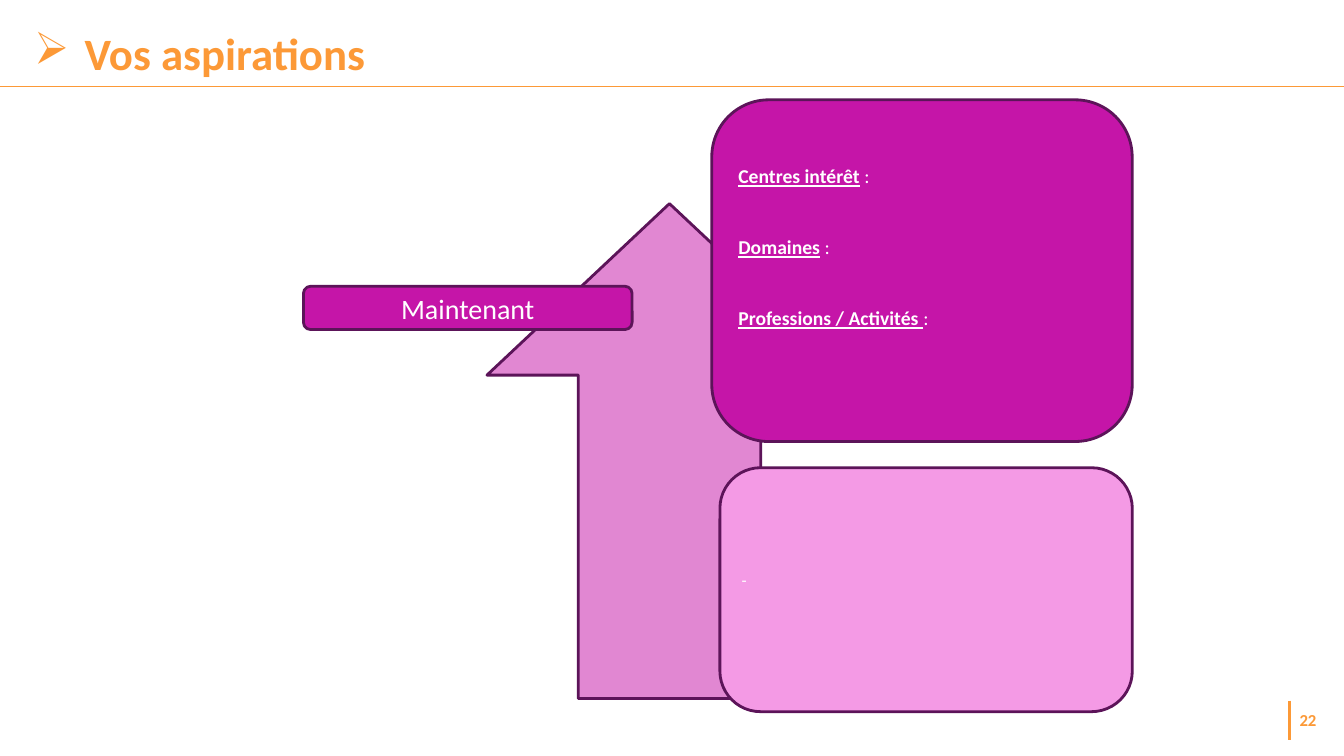
from typing import NamedTuple

from lxml.etree import SubElement
from pptx import Presentation
from pptx.dml.color import RGBColor
from pptx.enum.shapes import MSO_CONNECTOR, MSO_SHAPE
from pptx.enum.text import MSO_ANCHOR, PP_ALIGN
from pptx.oxml.ns import qn
from pptx.shapes.autoshape import Shape
from pptx.slide import Slide
from pptx.util import Inches, Pt

COLOURS = {
    "orange": "FC9937",
    "magenta": "C515A8",
    "pink": "F49AE5",
    "plum": "5C1459",
    "white": "FFFFFF",
}
FONT = "Calibri"


class Rule(NamedTuple):
    start: tuple[float, float]
    end: tuple[float, float]
    width: float


class Line(NamedTuple):
    """A paragraph: an optional bold underlined heading, then plain text."""
    heading: str
    plain: str


class Panel(NamedTuple):
    box: tuple[float, float, float, float]
    fill: str
    size: float
    lines: list[Line]
    alignment: PP_ALIGN = PP_ALIGN.LEFT
    gap: float = 0
    bottom_inset: float = 0.05


class Label(NamedTuple):
    box: tuple[float, float, float, float]
    text: str
    size: float
    anchor: MSO_ANCHOR
    bullet: str = ""


RULES = [
    Rule((0, 0.86), (13.33, 0.86), 1),
    Rule((12.79, 6.95), (12.79, 7.34), 1.5),
]
PANELS = [
    Panel((3.01, 2.84, 3.26, 0.43), "magenta", 20, [Line("", "Maintenant")], PP_ALIGN.CENTER),
    Panel(
        (7.06, 0.99, 4.17, 3.39), "magenta", 14,
        [
            Line("Centres intérêt", " :"),
            Line("Domaines", " :"),
            Line("Professions / Activités ", ":"),
        ],
        gap=34, bottom_inset=0.52,
    ),
    Panel((7.14, 4.64, 4.09, 2.42), "pink", 12, [Line("", "-")], bottom_inset=0.25),
]
LABELS = [
    Label((0.24, 0.02, 12.82, 0.83), "Vos aspirations", 32, MSO_ANCHOR.BOTTOM, "➢"),
    Label((12.79, 6.95, 0.49, 0.39), "22", 12, MSO_ANCHOR.MIDDLE),
]


def colour(name: str) -> RGBColor:
    return RGBColor.from_string(COLOURS[name])


def add_rule(slide: Slide, rule: Rule) -> None:
    points = [Inches(value) for value in (*rule.start, *rule.end)]
    connector = slide.shapes.add_connector(MSO_CONNECTOR.STRAIGHT, *points)
    connector.line.color.rgb = colour("orange")
    connector.line.width = Pt(rule.width)
    SubElement(connector.element.spPr, qn("a:effectLst"))


def add_outlined_shape(
    slide: Slide, kind: MSO_SHAPE, box: tuple[float, float, float, float], fill: str
) -> Shape:
    shape = slide.shapes.add_shape(kind, *map(Inches, box))
    shape.shadow.inherit = False
    shape.fill.solid()
    shape.fill.fore_color.rgb = colour(fill)
    shape.line.color.rgb = colour("plum")
    shape.line.width = Pt(2)
    return shape


def add_arrow(slide: Slide) -> None:
    arrow = add_outlined_shape(slide, MSO_SHAPE.UP_ARROW, (4.83, 2.02, 3.62, 4.91), "magenta")
    arrow.adjustments[0] = 0.5
    arrow.adjustments[1] = 0.47
    fill_colour = arrow.element.spPr.find(qn("a:solidFill")).find(qn("a:srgbClr"))
    SubElement(fill_colour, qn("a:alpha"), val="51000")


def add_panel(slide: Slide, panel: Panel) -> None:
    shape = add_outlined_shape(slide, MSO_SHAPE.ROUNDED_RECTANGLE, panel.box, panel.fill)
    frame = shape.text_frame
    frame.vertical_anchor = MSO_ANCHOR.MIDDLE
    frame.margin_bottom = Inches(panel.bottom_inset)
    for index, line in enumerate(panel.lines):
        paragraph = frame.add_paragraph() if index else frame.paragraphs[0]
        paragraph.alignment = panel.alignment
        if index:
            paragraph.space_before = Pt(panel.gap)
        for text, is_heading in ((line.heading, True), (line.plain, False)):
            if not text:
                continue
            run = paragraph.add_run()
            run.text = text
            run.font.name = FONT
            run.font.size = Pt(panel.size)
            run.font.color.rgb = colour("white")
            run.font.bold = run.font.underline = is_heading


def add_label(slide: Slide, label: Label) -> None:
    frame = slide.shapes.add_textbox(*map(Inches, label.box)).text_frame
    frame.word_wrap = True
    frame.vertical_anchor = label.anchor
    frame.text = label.text
    paragraph = frame.paragraphs[0]
    if label.bullet:
        properties = paragraph._p.get_or_add_pPr()
        properties.set("marL", str(Inches(0.5)))
        properties.set("indent", str(-Inches(0.5)))
        bullet_colour = SubElement(properties, qn("a:buClr"))
        SubElement(bullet_colour, qn("a:srgbClr"), val=COLOURS["orange"])
        SubElement(properties, qn("a:buChar"), char=label.bullet)
        paragraph.line_spacing = 0.9
    font = paragraph.runs[0].font
    font.name = FONT
    font.size = Pt(label.size)
    font.bold = True
    font.color.rgb = colour("orange")


def main() -> None:
    presentation = Presentation()
    presentation.slide_width = Inches(13.33)
    presentation.slide_height = Inches(7.5)
    slide = presentation.slides.add_slide(presentation.slide_layouts[6])
    for rule in RULES:
        add_rule(slide, rule)
    add_arrow(slide)
    for panel in PANELS:
        add_panel(slide, panel)
    for label in LABELS:
        add_label(slide, label)
    presentation.save("out.pptx")


if __name__ == "__main__":
    main()
